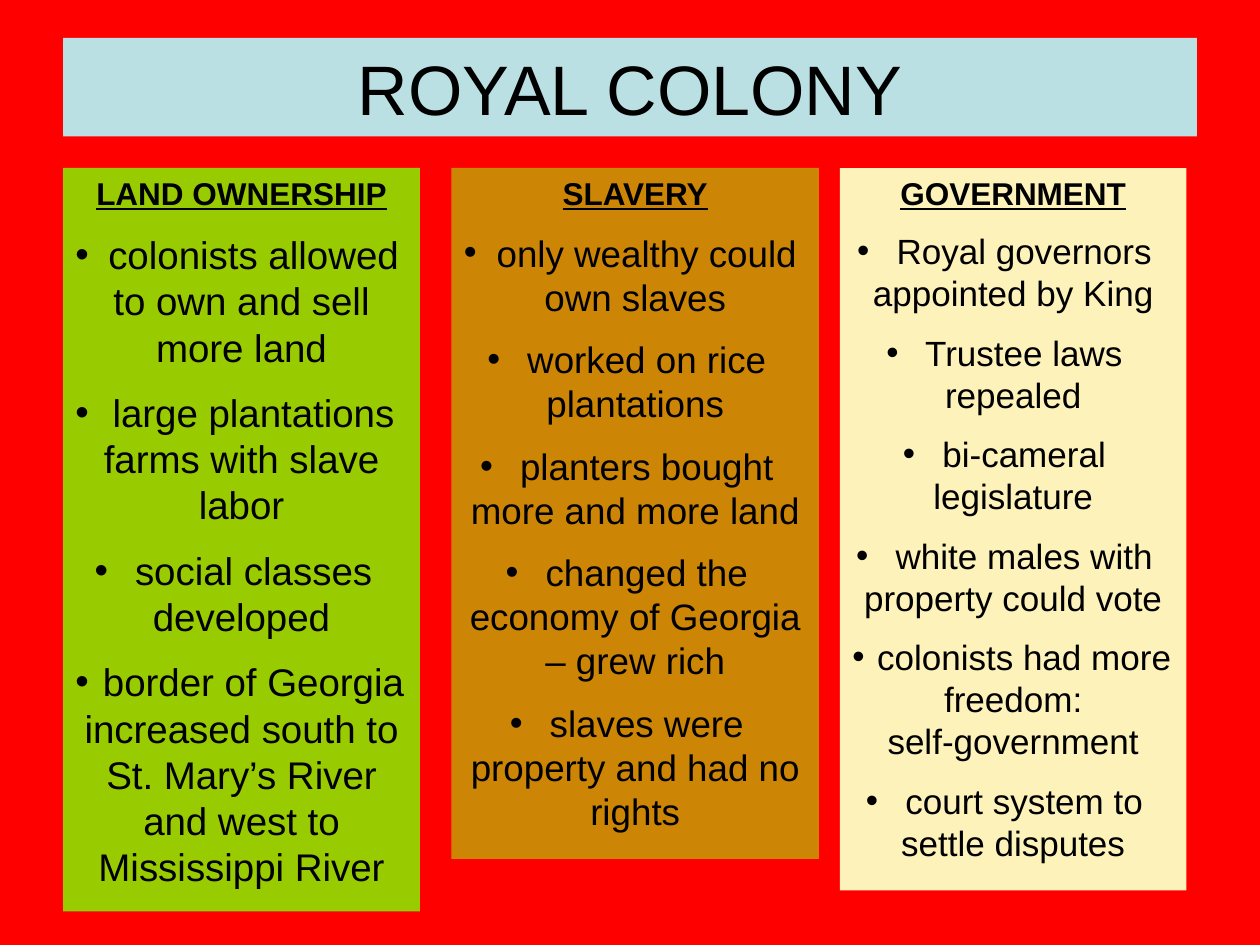
from lxml.etree import SubElement
from pptx import Presentation
from pptx.dml.color import RGBColor
from pptx.enum.text import MSO_ANCHOR as Anchor, MSO_AUTO_SIZE as AutoSize, PP_ALIGN as Align
from pptx.oxml.ns import qn
from pptx.util import Inches, Pt

RED = RGBColor(0xFF, 0x00, 0x00)
PALE_BLUE = RGBColor(0xBB, 0xE0, 0xE3)
GREEN = RGBColor(0x99, 0xCC, 0x00)
OCHRE = RGBColor(0xCC, 0x85, 0x04)
CREAM = RGBColor(0xFD, 0xF2, 0xB9)
BLACK = RGBColor(0x00, 0x00, 0x00)

COLUMNS, ROWS = 120, 90
COLUMN_TOP = 16
HEADING_SIZE = 18

TOPICS = [
    (6, 34, 70.8, GREEN, 22, "LAND OWNERSHIP", [
        "colonists allowed to own and sell more land",
        "large plantations farms with slave labor",
        "social classes developed",
        "border of Georgia increased south to St. Mary’s River and west to Mississippi River",
    ]),
    (43, 35, 65.8, OCHRE, 21, "SLAVERY", [
        "only wealthy could own slaves",
        "worked on rice plantations",
        "planters bought more and more land",
        "changed the economy of Georgia – grew rich",
        "slaves were property and had no rights",
    ]),
    (80, 33, 68.8, CREAM, 20, "GOVERNMENT", [
        "Royal governors appointed by King",
        "Trustee laws repealed",
        "bi-cameral legislature",
        "white males with property could vote",
        "colonists had more freedom:\vself-government",
        "court system to settle disputes",
    ]),
]


class ColonySlide:
    font_name = "Arial"

    def __init__(self, deck):
        self.column = deck.slide_width / COLUMNS
        self.row = deck.slide_height / ROWS
        self.slide = deck.slides.add_slide(deck.slide_layouts[5])
        background = self.slide.background.fill
        background.solid()
        background.fore_color.rgb = RED

    def area(self, left, top, width, height):
        return (int(left * self.column), int(top * self.row),
                int(width * self.column), int(height * self.row))

    def paint(self, shape, color):
        shape.fill.solid()
        shape.fill.fore_color.rgb = color

    def set_text(self, paragraph, text, size, heading=False):
        paragraph.text = text
        paragraph.alignment = Align.CENTER
        for run in paragraph.runs:
            font = run.font
            font.name = self.font_name
            font.size = Pt(size)
            font.color.rgb = BLACK
            font.bold = heading
            font.underline = heading

    def title(self, text, color, *grid):
        title = self.slide.shapes.title
        title.left, title.top, title.width, title.height = self.area(*grid)
        self.paint(title, color)
        frame = title.text_frame
        frame.auto_size = AutoSize.NONE
        frame.vertical_anchor = Anchor.MIDDLE
        self.set_text(frame.paragraphs[0], text, 40)

    def topic(self, left, width, height, color, size, heading, points):
        panel = self.slide.shapes.add_textbox(*self.area(left, COLUMN_TOP, width, height))
        self.paint(panel, color)
        frame = panel.text_frame
        frame.word_wrap = True
        frame.auto_size = AutoSize.SHAPE_TO_FIT_TEXT
        first = frame.paragraphs[0]
        self.set_text(first, heading, HEADING_SIZE, heading=True)
        first.space_before = Pt(HEADING_SIZE / 2)
        for point in points:
            paragraph = frame.add_paragraph()
            self.set_text(paragraph, " " + point, size)
            paragraph.space_before = Pt(size / 2)
            self.bullet(paragraph)

    def bullet(self, paragraph):
        properties = paragraph._p.get_or_add_pPr()
        SubElement(properties, qn("a:buFont"), typeface=self.font_name)
        SubElement(properties, qn("a:buChar"), char="•")


def main():
    deck = Presentation()
    deck.slide_width, deck.slide_height = Inches(10), Inches(7.5)
    page = ColonySlide(deck)
    page.title("ROYAL COLONY", PALE_BLUE, 6, 3.6, 108, 9.4)
    for topic in TOPICS:
        page.topic(*topic)
    deck.save("out.pptx")


if __name__ == "__main__":
    main()
